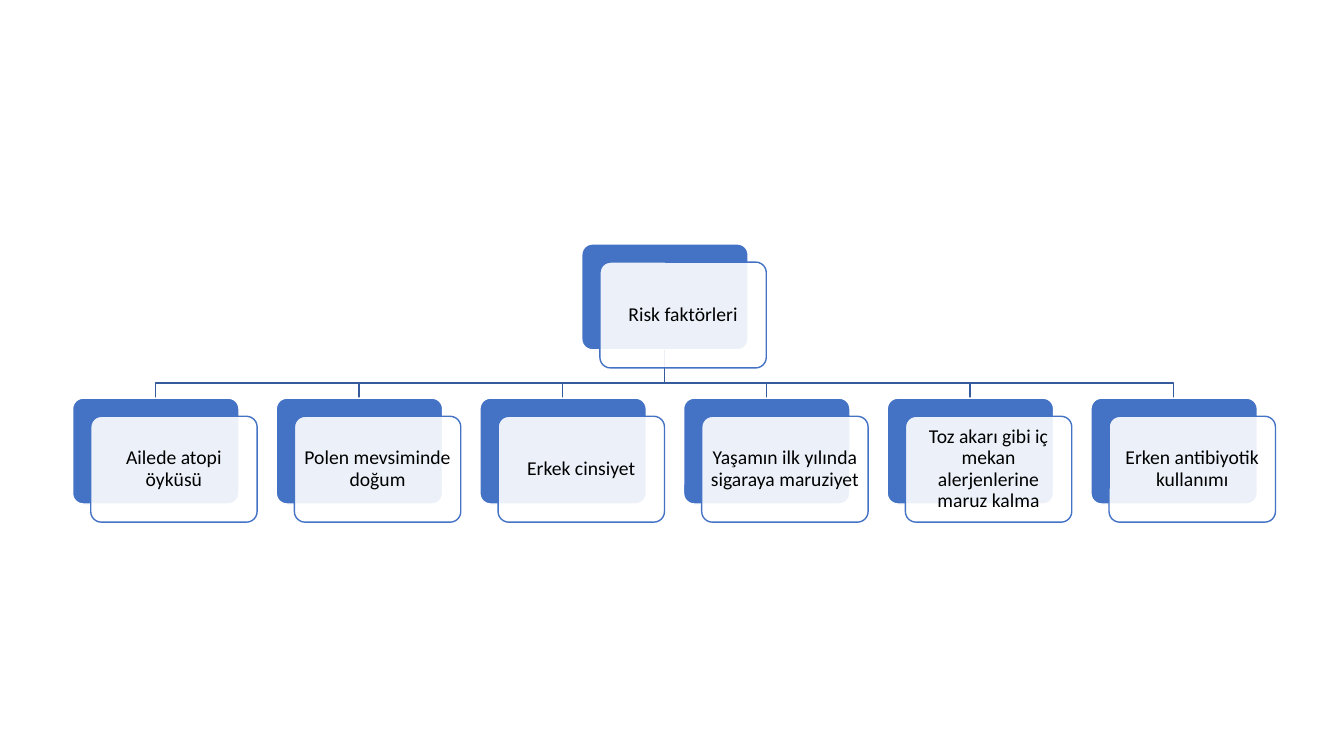
from lxml.etree import SubElement
from pptx import Presentation
from pptx.dml.color import RGBColor
from pptx.enum.shapes import MSO_SHAPE as Shape
from pptx.enum.text import MSO_ANCHOR as Anchor, PP_ALIGN as Align
from pptx.oxml.ns import qn
from pptx.util import Pt

PX = 9144  # EMU per px, 100 px to the inch
BLUE, DARK_BLUE, WHITE, BLACK = "4472C4", "365B9D", "FFFFFF", "000000"
BOX_WIDTH, BOX_HEIGHT, CARD_OFFSET = 165, 105, 18
ROOT_TOP, CHILD_TOP, BRANCH_TOP = 242, 395, 380
CHILD_LEFT, CHILD_STEP = 72, 202

ROOT = "Risk faktörleri"
FACTORS = [
    "Ailede atopi öyküsü",
    "Polen mevsiminde doğum",
    "Erkek cinsiyet",
    "Yaşamın ilk yılında sigaraya maruziyet",
    "Toz akarı gibi iç mekan alerjenlerine maruz kalma",
    "Erken antibiyotik kullanımı",
]


def color(hex_value):
    return RGBColor.from_string(hex_value)


def set_line(shape, hex_value):
    shape.line.color.rgb = color(hex_value)
    shape.line.width = Pt(1)


def add_rounded_box(slide, left, top, fill, line):
    shape = slide.shapes.add_shape(
        Shape.ROUNDED_RECTANGLE,
        left * PX, top * PX, BOX_WIDTH * PX, BOX_HEIGHT * PX)
    shape.adjustments[0] = 0.1
    shape.shadow.inherit = False
    shape.fill.solid()
    shape.fill.fore_color.rgb = color(fill)
    set_line(shape, line)
    return shape


def set_opacity(shape, percent):
    fill_color = shape.fill._xPr.find(qn("a:solidFill"))[0]
    SubElement(fill_color, qn("a:alpha")).set("val", str(percent * 1000))


def write_text(shape, text):
    frame = shape.text_frame
    frame.word_wrap = True
    frame.vertical_anchor = Anchor.MIDDLE
    frame.margin_left = frame.margin_right = 6 * PX
    frame.margin_top = frame.margin_bottom = 6 * PX
    paragraph = frame.paragraphs[0]
    paragraph.alignment = Align.CENTER
    paragraph.line_spacing = 0.9
    run = paragraph.add_run()
    run.text = text
    run.font.name = "Calibri"
    run.font.size = Pt(14)
    run.font.color.rgb = color(BLACK)


def add_node(slide, left, top, text):
    """Add a blue box with a translucent text card shifted over it."""
    add_rounded_box(slide, left, top, BLUE, WHITE)
    card = add_rounded_box(
        slide, left + CARD_OFFSET, top + CARD_OFFSET, WHITE, BLUE)
    set_opacity(card, 90)
    write_text(card, text)


def add_branch(slide, root_left, child_left):
    """Draw the bent line from the root's bottom to a child's top."""
    start_x = root_left + BOX_WIDTH // 2
    end_x = child_left + BOX_WIDTH // 2
    builder = slide.shapes.build_freeform(
        start_x, ROOT_TOP + BOX_HEIGHT, scale=PX)
    builder.add_line_segments(
        [(start_x, BRANCH_TOP), (end_x, BRANCH_TOP), (end_x, CHILD_TOP)],
        close=False)
    branch = builder.convert_to_shape()
    branch.shadow.inherit = False
    branch.fill.background()
    set_line(branch, DARK_BLUE)


def main():
    presentation = Presentation()
    presentation.slide_width = 1333 * PX
    presentation.slide_height = 750 * PX
    slide = presentation.slides.add_slide(presentation.slide_layouts[6])

    child_lefts = [CHILD_LEFT + i * CHILD_STEP for i in range(len(FACTORS))]
    root_left = (child_lefts[0] + child_lefts[-1]) // 2
    for child_left in reversed(child_lefts):
        add_branch(slide, root_left, child_left)
    add_node(slide, root_left, ROOT_TOP, ROOT)
    for child_left, factor in zip(child_lefts, FACTORS):
        add_node(slide, child_left, CHILD_TOP, factor)

    presentation.save("out.pptx")


if __name__ == "__main__":
    main()
